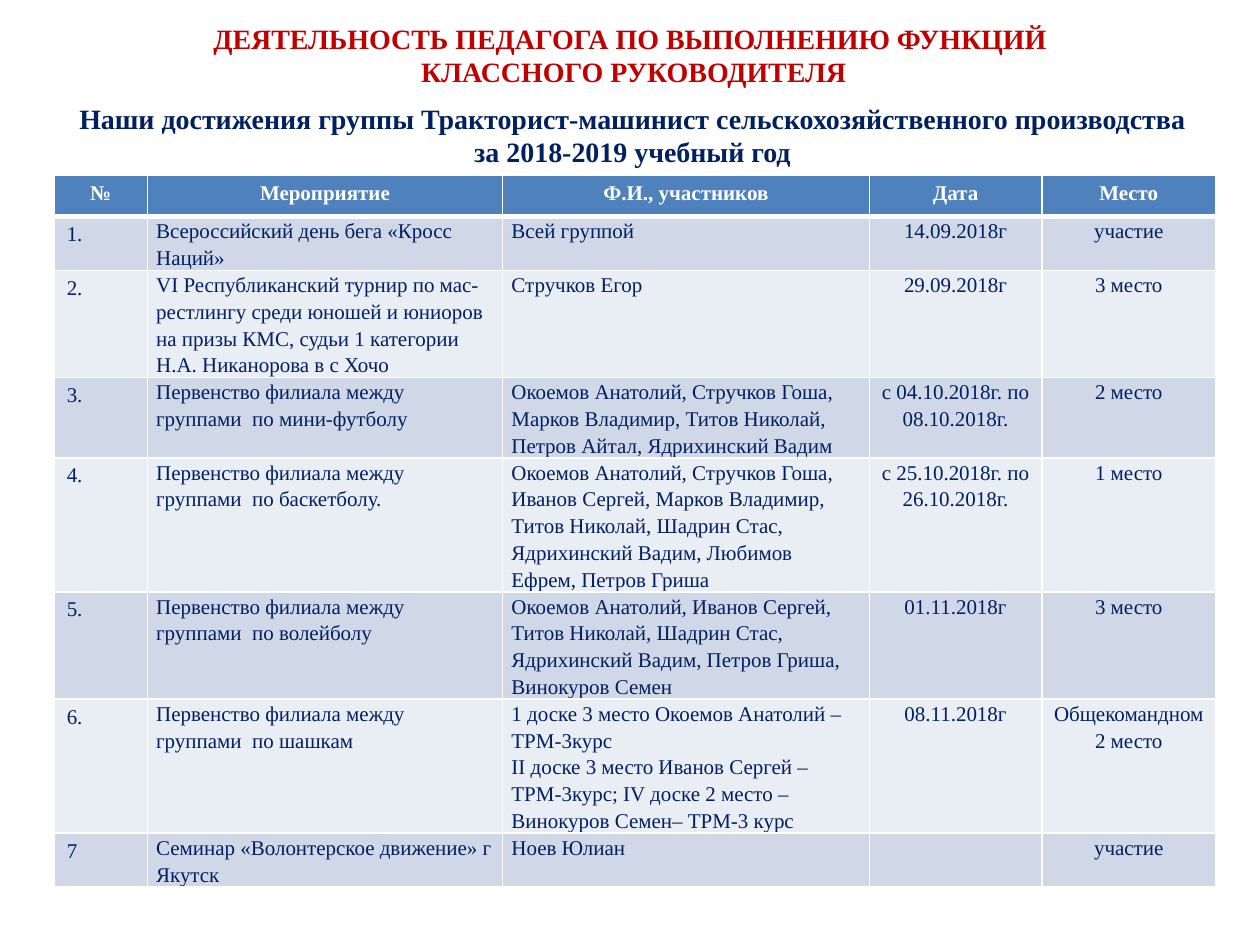
"""Build a slide with a table of a study group's achievements."""
from copy import deepcopy

from lxml.etree import SubElement
from pptx import Presentation
from pptx.dml.color import RGBColor
from pptx.enum.text import MSO_ANCHOR as Anchor, PP_ALIGN as Align
from pptx.oxml.ns import qn
from pptx.util import Inches, Pt

FONT = "Times New Roman"
RED = RGBColor(0xC0, 0x00, 0x00)
NAVY = RGBColor(0x00, 0x20, 0x60)
WHITE = RGBColor(0xFF, 0xFF, 0xFF)
BLUE = RGBColor(0x4F, 0x81, 0xBD)
BAND_DARK = RGBColor(0xD0, 0xD8, 0xE8)
BAND_LIGHT = RGBColor(0xE9, 0xED, 0xF4)

HEADERS = ["№", "Мероприятие", "Ф.И., участников", "Дата", "Место"]
EVENTS = [
    ["1.", "Всероссийский день бега «Кросс Наций»", "Всей группой", "14.09.2018г", "участие"],
    ["2.", "VI Республиканский турнир по мас-рестлингу среди юношей и юниоров "
           "на призы КМС, судьи 1 категории Н.А. Никанорова в с Хочо",
     "Стручков Егор", "29.09.2018г", "3 место"],
    ["3.", "Первенство филиала между группами  по мини-футболу",
     "Окоемов Анатолий, Стручков Гоша, Марков Владимир, Титов Николай, "
     "Петров Айтал, Ядрихинский Вадим",
     "с 04.10.2018г. по 08.10.2018г.", "2 место"],
    ["4.", "Первенство филиала между группами  по баскетболу.",
     "Окоемов Анатолий, Стручков Гоша, Иванов Сергей, Марков Владимир, "
     "Титов Николай, Шадрин Стас, Ядрихинский Вадим, Любимов Ефрем, Петров Гриша",
     "с 25.10.2018г. по 26.10.2018г.", "1 место"],
    ["5.", "Первенство филиала между группами  по волейболу",
     "Окоемов Анатолий, Иванов Сергей, Титов Николай, Шадрин Стас, "
     "Ядрихинский Вадим, Петров Гриша, Винокуров Семен",
     "01.11.2018г", "3 место"],
    ["6.", "Первенство филиала между группами  по шашкам",
     ["1 доске 3 место Окоемов Анатолий –ТРМ-3курс",
      "II доске 3 место Иванов Сергей –ТРМ-3курс; IV доске 2 место – "
      "Винокуров Семен– ТРМ-3 курс"],
     "08.11.2018г", "Общекомандном 2 место"],
    ["7", "Семинар «Волонтерское движение» г Якутск", "Ноев Юлиан", "", "участие"],
]
COLUMN_WIDTHS = [0.74, 2.82, 2.91, 1.37, 1.38]
HEADER_HEIGHT, ROW_HEIGHT = 0.33, 0.41


def write(frame, text, size=12, color=NAVY, bold=False, align=Align.LEFT, spacing=None):
    lines = [text] if isinstance(text, str) else text
    for index, line in enumerate(lines):
        para = frame.paragraphs[0] if index == 0 else frame.add_paragraph()
        para.text = line
        para.alignment = align
        para.line_spacing = spacing
        for span in para.runs:
            span.font.name = FONT
            span.font.size = Pt(size)
            span.font.bold = bold
            span.font.color.rgb = color
        for line_break in para._p.findall(qn("a:br")):
            line_break.insert(0, deepcopy(para.runs[0]._r.rPr))


def paint(cell, color, top=1, bottom=1):
    cell.fill.solid()
    cell.fill.fore_color.rgb = color
    properties = cell._tc.get_or_add_tcPr()
    sides = {"lnL": 1, "lnR": 1, "lnT": top, "lnB": bottom}
    for index, (side, width) in enumerate(sides.items()):
        border = SubElement(properties, qn(f"a:{side}"), w=str(Pt(width)))
        fill = SubElement(border, qn("a:solidFill"))
        SubElement(fill, qn("a:srgbClr"), val=str(WHITE))
        properties.insert(index, border)


deck = Presentation()
deck.slide_width, deck.slide_height = Inches(10), Inches(7.5)
page = deck.slides.add_slide(deck.slide_layouts[5])

title = page.shapes.title
title.left, title.top = Inches(0.53), Inches(0)
title.width, title.height = Inches(9), Inches(0.87)
title.text_frame.vertical_anchor = Anchor.MIDDLE
write(title.text_frame, "ДЕЯТЕЛЬНОСТЬ ПЕДАГОГА ПО ВЫПОЛНЕНИЮ ФУНКЦИЙ \nКЛАССНОГО РУКОВОДИТЕЛЯ",
      size=16, color=RED, bold=True, align=Align.CENTER)

table = page.shapes.add_table(
    len(EVENTS) + 1, len(HEADERS), Inches(0.43), Inches(1.39),
    Inches(sum(COLUMN_WIDTHS)), Inches(HEADER_HEIGHT + ROW_HEIGHT * len(EVENTS))).table
table.horz_banding = False
for column, width in zip(table.columns, COLUMN_WIDTHS):
    column.width = Inches(width)
for row in table.rows:
    row.height = Inches(ROW_HEIGHT)
table.rows[0].height = Inches(HEADER_HEIGHT)

for column, header in enumerate(HEADERS):
    cell = table.cell(0, column)
    paint(cell, BLUE, bottom=3)
    write(cell.text_frame, header, color=WHITE, bold=True, align=Align.CENTER)

for row, event in enumerate(EVENTS, 1):
    for column, text in enumerate(event):
        cell = table.cell(row, column)
        paint(cell, BAND_DARK if row % 2 else BAND_LIGHT, top=3 if row == 1 else 1)
        if column == 0:
            write(cell.text_frame, text)
        elif text:
            cell.margin_left = cell.margin_right = Inches(0.07)
            cell.margin_top = cell.margin_bottom = Inches(0)
            write(cell.text_frame, text, spacing=1.15,
                  align=Align.CENTER if column > 2 else Align.LEFT)

subtitle = page.shapes.add_textbox(Inches(0.52), Inches(0.68), Inches(9), Inches(0.78))
subtitle.text_frame.word_wrap = True
subtitle.text_frame.vertical_anchor = Anchor.MIDDLE
write(subtitle.text_frame,
      "Наши достижения группы Тракторист-машинист сельскохозяйственного "
      "производства за 2018-2019 учебный год",
      size=16, bold=True, align=Align.CENTER)

deck.save("out.pptx")
